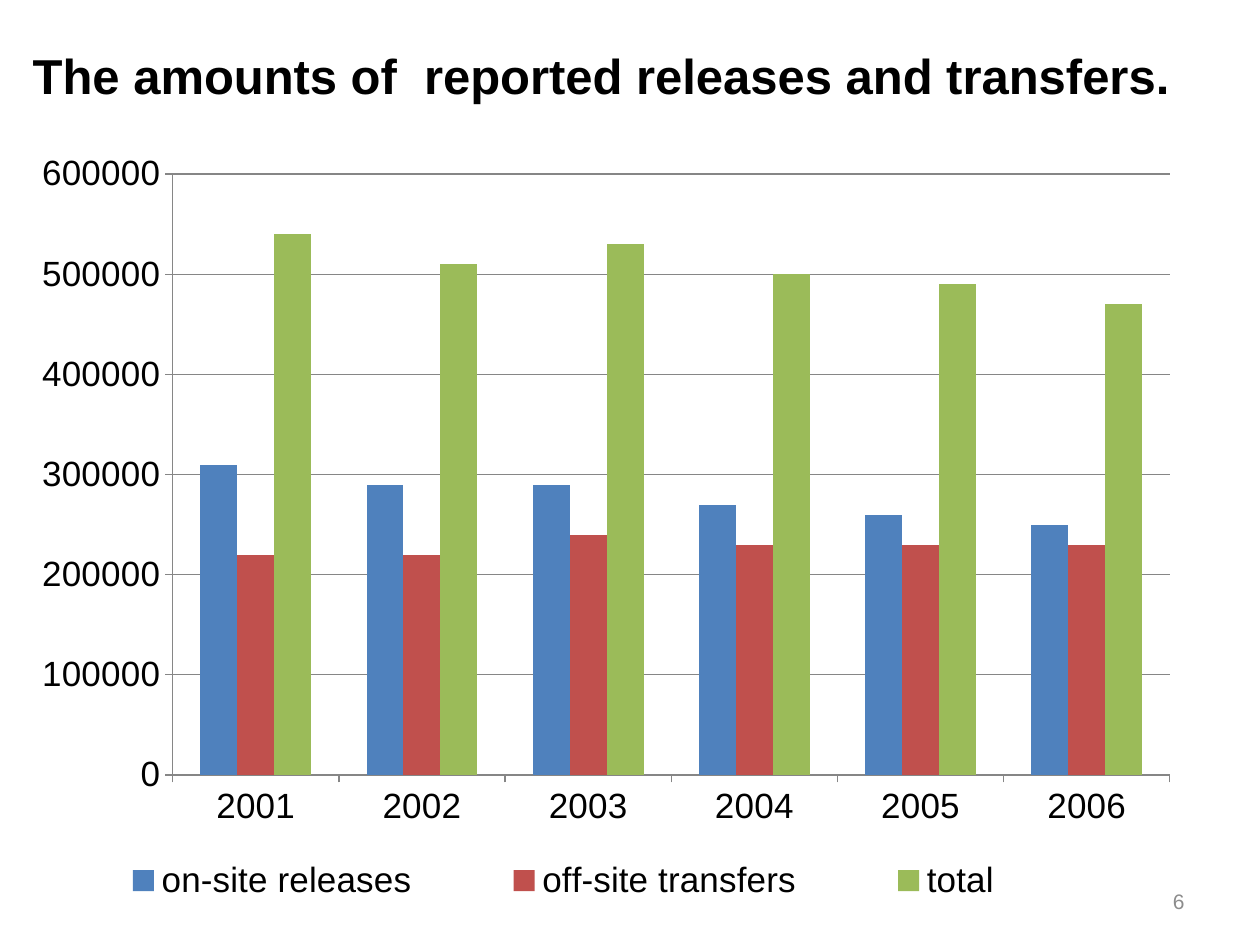
from typing import NamedTuple

from lxml import etree
from pptx import Presentation
from pptx.chart.data import CategoryChartData
from pptx.dml.color import RGBColor
from pptx.enum.chart import XL_CHART_TYPE, XL_LEGEND_POSITION, XL_TICK_MARK
from pptx.enum.text import MSO_ANCHOR, PP_ALIGN
from pptx.oxml.ns import qn
from pptx.util import Inches, Pt

COLUMNS = XL_CHART_TYPE.COLUMN_CLUSTERED
BOTTOM = XL_LEGEND_POSITION.BOTTOM
OUTSIDE = XL_TICK_MARK.OUTSIDE
MIDDLE = MSO_ANCHOR.MIDDLE
LEFT, RIGHT = PP_ALIGN.LEFT, PP_ALIGN.RIGHT
TITLE_ONLY = 5
FONT = "Arial"
BLACK, GRAY, AXIS_GRAY = "000000", "8C8C8C", "868686"


class Area(NamedTuple):
    left: float
    top: float
    width: float
    height: float


class Measure(NamedTuple):
    name: str
    color: str
    thousands: tuple[int, ...]


YEARS = range(2001, 2007)
MEASURES = [
    Measure("on-site releases", "4F81BD", (310, 290, 290, 270, 260, 250)),
    Measure("off-site transfers", "C0504D", (220, 220, 240, 230, 230, 230)),
    Measure("total", "9BBB59", (540, 510, 530, 500, 490, 470)),
]
TITLE_AREA = Area(0.16, 0.31, 9.38, 0.57)
NUMBER_AREA = Area(7.17, 6.95, 2.33, 0.4)
CHART_AREA = Area(0.23, 1.02, 9.06, 6.25)
PLOT_SHARE = Area(0.126, 0.058, 0.874, 0.763)
LEGEND_SHARE = Area(0.012, 0.91, 0.913, 0.09)


def rgb(color: str) -> RGBColor:
    return RGBColor.from_string(color)


def lengths(area: Area) -> list[int]:
    return [Inches(value) for value in area]


def format_font(font, color: str, **values) -> None:
    font.color.rgb = rgb(color)
    for name, value in {"name": FONT, **values}.items():
        setattr(font, name, value)


def write_text(box, text: str, align, color: str, **values) -> None:
    frame = box.text_frame
    frame.word_wrap = True
    frame.vertical_anchor = MIDDLE
    para = frame.paragraphs[0]
    para.alignment = align
    span = para.add_run()
    span.text = text
    format_font(span.font, color, **values)


def set_layout(parent, after: str | None, share: Area, inner: bool = False) -> None:
    for old in parent.findall(qn("c:layout")):
        parent.remove(old)
    layout = etree.Element(qn("c:layout"))
    manual = etree.SubElement(layout, qn("c:manualLayout"))
    settings = {"layoutTarget": "inner"} if inner else {}
    settings |= {"xMode": "edge", "yMode": "edge"}
    settings |= dict(zip(("x", "y", "w", "h"), map(str, share)))
    for name, value in settings.items():
        etree.SubElement(manual, qn(f"c:{name}")).set("val", value)
    if after:
        parent.find(qn(after)).addnext(layout)
    else:
        parent.insert(0, layout)


def add_releases_chart(page) -> None:
    data = CategoryChartData(number_format="General")
    data.categories = [str(year) for year in YEARS]
    for measure in MEASURES:
        data.add_series(measure.name, [value * 1000 for value in measure.thousands])
    chart = page.shapes.add_chart(COLUMNS, *lengths(CHART_AREA), data).chart
    chart.has_title = False
    format_font(chart.font, BLACK, size=Pt(20))

    plot = chart.plots[0]
    plot.gap_width = 150
    plot.overlap = 0
    plot.vary_by_categories = False
    for series, measure in zip(plot.series, MEASURES):
        series.format.fill.solid()
        series.format.fill.fore_color.rgb = rgb(measure.color)

    value_axis = chart.value_axis
    value_axis.minimum_scale = 0
    value_axis.maximum_scale = 600000
    value_axis.major_unit = 100000
    value_axis.has_major_gridlines = True
    lines = [value_axis.major_gridlines.format.line]
    for axis in (chart.category_axis, value_axis):
        axis.major_tick_mark = OUTSIDE
        lines.append(axis.format.line)
    for line in lines:
        line.color.rgb = rgb(AXIS_GRAY)
        line.width = Pt(0.75)

    chart.has_legend = True
    legend = chart.legend
    legend.position = BOTTOM
    legend.include_in_layout = False
    format_font(legend.font, BLACK, size=Pt(20))
    plot_area = chart.element.find(".//" + qn("c:plotArea"))
    set_layout(plot_area, None, PLOT_SHARE, inner=True)
    set_layout(chart.element.find(".//" + qn("c:legend")), "c:legendPos", LEGEND_SHARE)


def main() -> None:
    deck = Presentation()
    deck.slide_width, deck.slide_height = Inches(10), Inches(7.5)
    page = deck.slides.add_slide(deck.slide_layouts[TITLE_ONLY])

    number = page.shapes.add_textbox(*lengths(NUMBER_AREA))
    write_text(number, "6", RIGHT, GRAY, size=Pt(12))

    add_releases_chart(page)

    title = page.shapes.title
    title.left, title.top, title.width, title.height = lengths(TITLE_AREA)
    write_text(title, "The amounts of  reported releases and transfers.",
               LEFT, BLACK, size=Pt(28), bold=True)

    deck.save("out.pptx")


if __name__ == "__main__":
    main()
